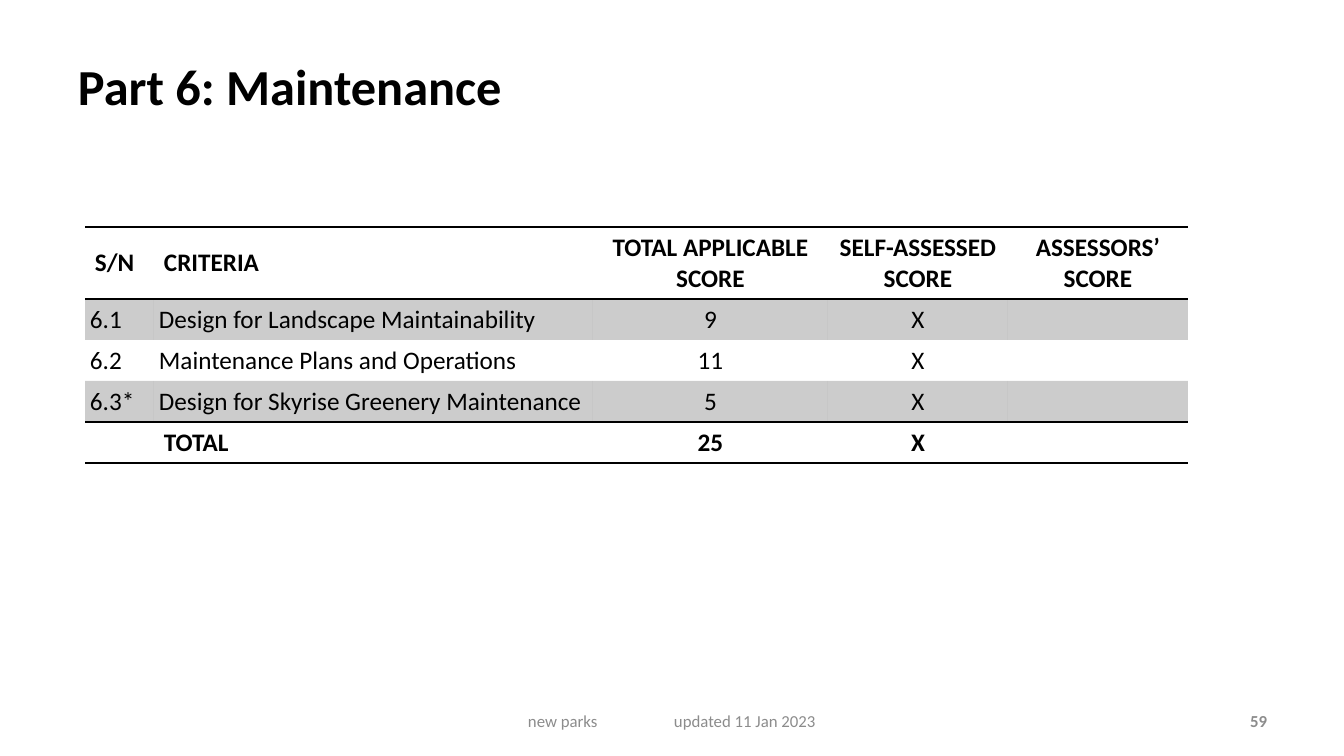
from dataclasses import dataclass

from lxml import etree
from pptx import Presentation
from pptx.dml.color import RGBColor
from pptx.enum.text import MSO_ANCHOR, PP_ALIGN
from pptx.oxml.ns import qn
from pptx.util import Emu, Pt

LEFT, CENTER, RIGHT = PP_ALIGN.LEFT, PP_ALIGN.CENTER, PP_ALIGN.RIGHT
MIDDLE, BOTTOM = MSO_ANCHOR.MIDDLE, MSO_ANCHOR.BOTTOM
PX_PER_INCH = 100.8
FONT = "Calibri"
COLORS = {"ink": "000000", "footer": "8C8C8C"}
BAND_ALPHA = 20
PLAIN_TABLE_STYLE = "{2D5ABB26-0587-4C30-8999-92F81FD0307C}"

COLUMN_WIDTHS = (69, 439, 235, 180, 180)
HEADER_HEIGHT, ROW_HEIGHT = 72, 41
INSET, TIGHT_INSET = 10, 5


@dataclass(frozen=True)
class Label:
    text: str
    left: int
    top: int
    width: int
    height: int
    size: int
    color: str
    bold: bool = False
    align: PP_ALIGN = LEFT
    inset: int = INSET
    tab: int = 0


@dataclass(frozen=True)
class ScoreRow:
    cells: tuple[str, ...]
    bold: bool = False
    banded: bool = False
    ruled: bool = False


LABELS = (
    Label("Part 6: Maintenance", 68, 30, 1044, 110, 36, "ink", bold=True),
    Label("new parks\tupdated 11 Jan 2023", 460, 701, 425, 40, 12, "footer",
          inset=68, tab=146),
    Label("59", 964, 701, 313, 40, 12, "footer", bold=True, align=RIGHT),
)

SCORE_ROWS = (
    ScoreRow(("S/N", "CRITERIA", "TOTAL APPLICABLE SCORE",
              "SELF-ASSESSED SCORE", "ASSESSORS’ SCORE"), bold=True, ruled=True),
    ScoreRow(("6.1", "Design for Landscape Maintainability", "9", "X", ""), banded=True),
    ScoreRow(("6.2", "Maintenance Plans and Operations", "11", "X", "")),
    ScoreRow(("6.3*", "Design for Skyrise Greenery Maintenance", "5", "X", ""),
             banded=True, ruled=True),
    ScoreRow(("", "TOTAL", "25", "X", ""), bold=True, ruled=True),
)


def px(length: int) -> Emu:
    return Emu(round(length * 914400 / PX_PER_INCH))


def style_font(font, size: int, color: str, bold: bool) -> None:
    font.name = FONT
    font.size = Pt(size)
    font.bold = bold
    font.color.rgb = RGBColor.from_string(COLORS[color])


def add_tab_stop(para, position: int) -> None:
    tabs = etree.SubElement(para._p.get_or_add_pPr(), qn("a:tabLst"))
    etree.SubElement(tabs, qn("a:tab"), pos=str(px(position)), algn="l")


def add_label(page, label: Label) -> None:
    box = page.shapes.add_textbox(
        px(label.left), px(label.top), px(label.width), px(label.height))
    frame = box.text_frame
    frame.word_wrap = True
    frame.vertical_anchor = MIDDLE
    frame.margin_left = px(label.inset)
    frame.text = label.text
    para = frame.paragraphs[0]
    para.alignment = label.align
    if label.tab:
        add_tab_stop(para, label.tab)
    for span in para.runs:
        style_font(span.font, label.size, label.color, label.bold)


def set_borders(cell, ruled_sides: set[str]) -> None:
    """Draw a 1 pt line on the named sides (L, R, T, B) and none on the others."""
    properties = cell._tc.get_or_add_tcPr()
    for index, side in enumerate("LRTB"):
        line = etree.Element(qn(f"a:ln{side}"), w=str(Pt(1)))
        if side in ruled_sides:
            fill = etree.SubElement(line, qn("a:solidFill"))
            etree.SubElement(fill, qn("a:srgbClr"), val=COLORS["ink"])
        else:
            etree.SubElement(line, qn("a:noFill"))
        properties.insert(index, line)


def fill_cell(cell, banded: bool) -> None:
    if not banded:
        cell.fill.background()
        return
    cell.fill.solid()
    cell.fill.fore_color.rgb = RGBColor.from_string(COLORS["ink"])
    color = cell._tc.tcPr.find(f".//{qn('a:srgbClr')}")
    etree.SubElement(color, qn("a:alpha"), val=str(BAND_ALPHA * 1000))


def write_cell(cell, text: str, column: int, bold: bool) -> None:
    is_score = column >= 2
    is_tight = not (is_score or bold)
    cell.vertical_anchor = BOTTOM if is_tight else MIDDLE
    cell.margin_left = cell.margin_right = px(TIGHT_INSET if is_tight else INSET)
    cell.margin_top = cell.margin_bottom = px(TIGHT_INSET)
    cell.text = text
    para = cell.text_frame.paragraphs[0]
    para.alignment = CENTER if is_score else LEFT
    style_font(para.font, 18, "ink", bold)
    for span in para.runs:
        style_font(span.font, 18, "ink", bold)


def add_score_table(page, left: int, top: int) -> None:
    heights = [HEADER_HEIGHT] + [ROW_HEIGHT] * (len(SCORE_ROWS) - 1)
    frame = page.shapes.add_table(
        len(SCORE_ROWS), len(COLUMN_WIDTHS),
        px(left), px(top), px(sum(COLUMN_WIDTHS)), px(sum(heights)))
    table = frame.table
    table.first_row = table.horz_banding = False
    table._tbl.tblPr.find(qn("a:tableStyleId")).text = PLAIN_TABLE_STYLE
    for column, width in zip(table.columns, COLUMN_WIDTHS):
        column.width = px(width)
    for index, (row, height) in enumerate(zip(SCORE_ROWS, heights)):
        table.rows[index].height = px(height)
        ruled_above = index == 0 or SCORE_ROWS[index - 1].ruled
        sides = set("T" * ruled_above + "B" * row.ruled)
        for column, text in enumerate(row.cells):
            cell = table.cell(index, column)
            write_cell(cell, text, column, row.bold)
            fill_cell(cell, row.banded)
            set_borders(cell, sides)


def main() -> None:
    deck = Presentation()
    deck.slide_width, deck.slide_height = px(1344), px(756)
    page = deck.slides.add_slide(deck.slide_layouts[6])
    for label in LABELS:
        add_label(page, label)
    add_score_table(page, 85, 227)
    deck.save("out.pptx")


if __name__ == "__main__":
    main()
